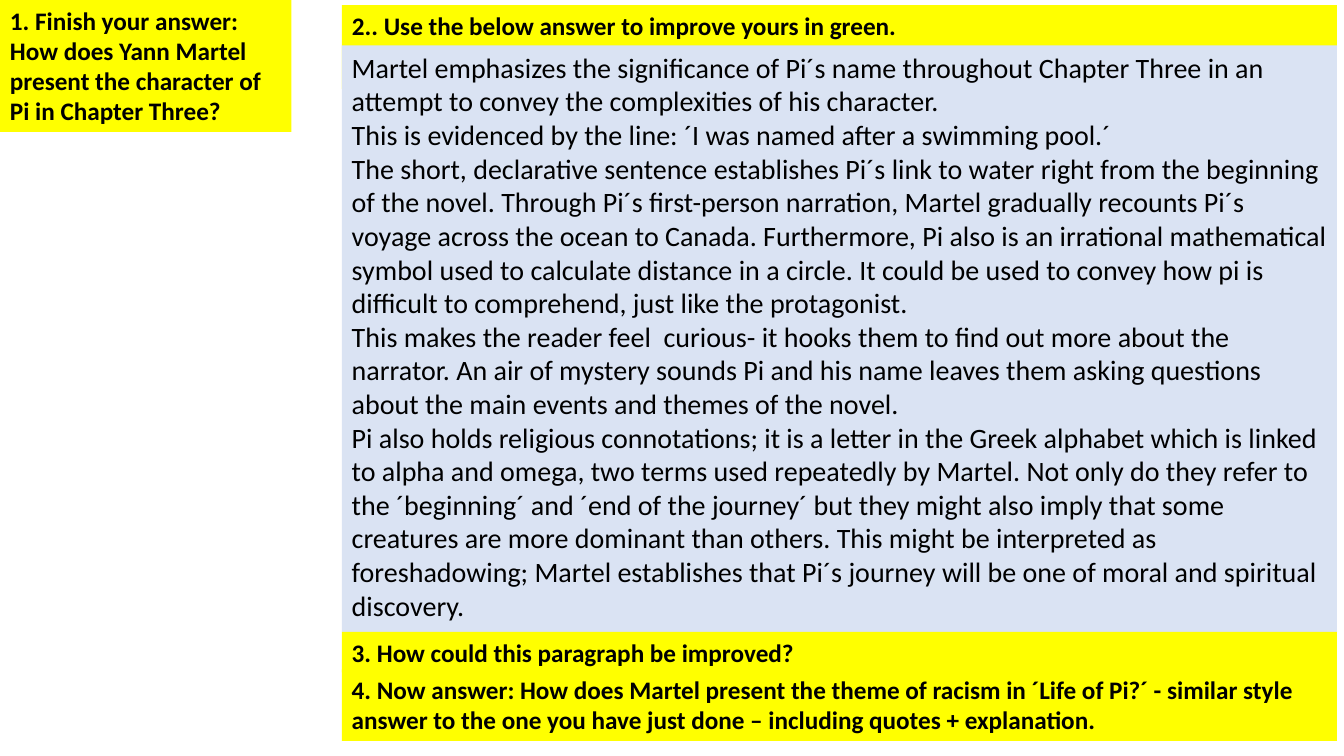
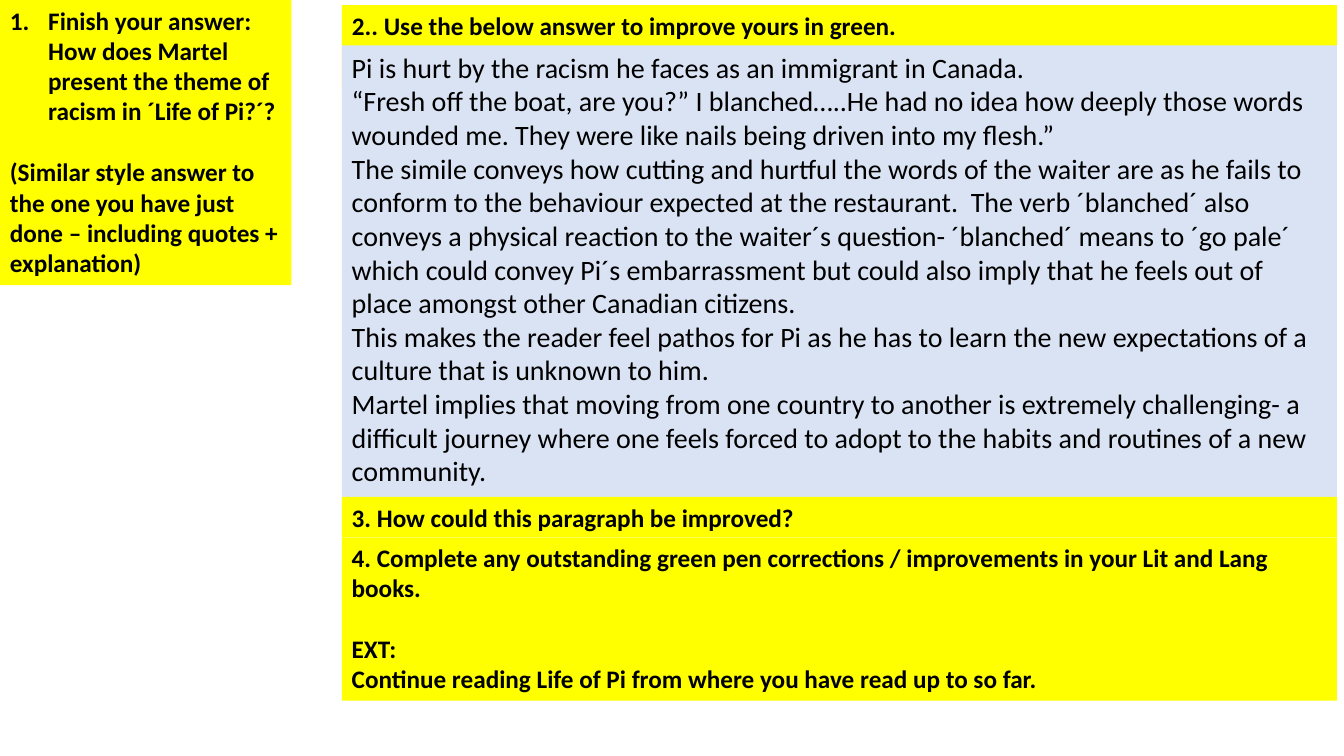
from dataclasses import dataclass

from lxml.etree import SubElement
from pptx import Presentation
from pptx.dml.color import RGBColor
from pptx.enum.text import MSO_ANCHOR, MSO_AUTO_SIZE, PP_ALIGN
from pptx.oxml.ns import qn
from pptx.util import Pt

PX = 9144  # 100 px to the inch
SLIDE_WIDTH, SLIDE_HEIGHT = 1333, 750
COLUMN_LEFT, COLUMN_TOP, COLUMN_WIDTH = 339, 5, 987
BAND_HEIGHT = 40
QUESTION_WIDTH = 289
NUMBER_INDENT = 38

YELLOW = RGBColor(0xFF, 0xFF, 0x00)
PALE_BLUE = RGBColor(0xDA, 0xE3, 0xF3)
BLACK = RGBColor(0x00, 0x00, 0x00)
FONT = "Calibri"
TASK_SIZE, ANSWER_SIZE = 18, 20
LINE_GAP = 22  # points, one line of task text

IMPROVE_TASK = "2.. Use the below answer to improve yours in green."
REVIEW_TASK = "3. How could this paragraph be improved?"


@dataclass
class Line:
    text: str
    gap_before: int = 0
    numbered: bool = False


def number_paragraph(para):
    properties = para._p.get_or_add_pPr()
    properties.set("marL", str(NUMBER_INDENT * PX))
    properties.set("indent", str(-NUMBER_INDENT * PX))
    SubElement(properties, qn("a:buFont"), typeface="+mj-lt")
    SubElement(properties, qn("a:buAutoNum"), type="arabicPeriod")


def fill_panel(panel, box, lines, color, size, bold):
    """Place a text shape in box (left, top, width, height) and write its lines."""
    panel.left, panel.top, panel.width, panel.height = (side * PX for side in box)
    panel.fill.solid()
    panel.fill.fore_color.rgb = color
    frame = panel.text_frame
    frame.word_wrap = True
    frame.auto_size = MSO_AUTO_SIZE.SHAPE_TO_FIT_TEXT
    frame.vertical_anchor = MSO_ANCHOR.TOP
    for index, line in enumerate(lines):
        para = frame.add_paragraph() if index else frame.paragraphs[0]
        if line.numbered:
            number_paragraph(para)
        para.alignment = PP_ALIGN.LEFT
        para.space_before = Pt(line.gap_before)
        span = para.add_run()
        span.text = line.text
        span.font.name = FONT
        span.font.size = Pt(size)
        span.font.bold = bold
        span.font.color.rgb = BLACK


def add_task(page, box, lines):
    panel = page.shapes.add_textbox(0, 0, 0, 0)
    fill_panel(panel, box, lines, YELLOW, TASK_SIZE, True)


def add_answer(page, box, lines):
    panel = page.shapes.add_textbox(0, 0, 0, 0)
    fill_panel(panel, box, lines, PALE_BLUE, ANSWER_SIZE, False)


def add_column(page, left, top, width, answer, answer_height,
               final_task, final_height, overlap=0):
    """Stack the title band, model answer and two closing tasks."""
    fill_panel(page.shapes.title, (left, top, width, BAND_HEIGHT),
               [Line(IMPROVE_TASK)], YELLOW, TASK_SIZE, True)
    top += BAND_HEIGHT
    add_answer(page, (left, top, width, answer_height), answer)
    top += answer_height
    add_task(page, (left, top, width, BAND_HEIGHT), [Line(REVIEW_TASK)])
    top += BAND_HEIGHT - overlap
    add_task(page, (left, top, width, final_height), final_task)


def add_lesson(deck, question, question_height, **column):
    page = deck.slides.add_slide(deck.slide_layouts[5])
    add_column(page, COLUMN_LEFT, COLUMN_TOP, COLUMN_WIDTH, **column)
    add_task(page, (0, 0, QUESTION_WIDTH, question_height), question)


def add_character_lesson(deck):
    add_lesson(
        deck,
        question=[Line("1. Finish your answer: How does Yann Martel present the "
                       "character of Pi in Chapter Three?")],
        question_height=131,
        answer=[
            Line("Martel emphasizes the significance of Pi´s name throughout Chapter "
                 "Three in an attempt to convey the complexities of his character."),
            Line("This is evidenced by the line: ´I was named after a swimming pool.´"),
            Line("The short, declarative sentence establishes Pi´s link to water right "
                 "from the beginning of the novel. Through Pi´s first-person narration, "
                 "Martel gradually recounts Pi´s voyage across the ocean to Canada. "
                 "Furthermore, Pi also is an irrational mathematical symbol used to "
                 "calculate distance in a circle. It could be used to convey how pi is "
                 "difficult to comprehend, just like the protagonist."),
            Line("This makes the reader feel  curious- it hooks them to find out more "
                 "about the narrator. An air of mystery sounds Pi and his name leaves "
                 "them asking questions about the main events and themes of the novel."),
            Line("Pi also holds religious connotations; it is a letter in the Greek "
                 "alphabet which is linked to alpha and omega, two terms used repeatedly "
                 "by Martel. Not only do they refer to the ´beginning´ and ´end of the "
                 "journey´ but they might also imply that some creatures are more "
                 "dominant than others. This might be interpreted as foreshadowing; "
                 "Martel establishes that Pi´s journey will be one of moral and "
                 "spiritual discovery."),
        ],
        answer_height=582,
        final_task=[Line("4. Now answer: How does Martel present the theme of racism in "
                         "´Life of Pi?´ - similar style answer to the one you have just "
                         "done – including quotes + explanation.")],
        final_height=71,
        overlap=3,
    )


def add_racism_lesson(deck):
    add_lesson(
        deck,
        question=[
            Line("Finish your answer: How does Martel present the theme of racism in "
                 "´Life of Pi?´?", numbered=True),
            Line("(Similar style answer to the one you have just done – including "
                 "quotes + explanation)", gap_before=LINE_GAP),
        ],
        question_height=283,
        answer=[
            Line("Pi is hurt by the racism he faces as an immigrant in Canada."),
            Line("“Fresh off the boat, are you?” I blanched…..He had no idea how deeply "
                 "those words wounded me. They were like nails being driven into my "
                 "flesh.”"),
            Line("The simile conveys how cutting and hurtful the words of the waiter are "
                 "as he fails to conform to the behaviour expected at the restaurant.  "
                 "The verb ´blanched´ also conveys a physical reaction to the waiter´s "
                 "question- ´blanched´ means to ´go pale´ which could convey Pi´s "
                 "embarrassment but could also imply that he feels out of place amongst "
                 "other Canadian citizens."),
            Line("This makes the reader feel pathos for Pi as he has to learn the new "
                 "expectations of a culture that is unknown to him."),
            Line("Martel implies that moving from one country to another is extremely "
                 "challenging- a difficult journey where one feels forced to adopt to "
                 "the habits and routines of a new community."),
        ],
        answer_height=448,
        final_task=[
            Line("4. Complete any outstanding green pen corrections / improvements in "
                 "your Lit and Lang books."),
            Line("EXT:", gap_before=LINE_GAP),
            Line("Continue reading Life of Pi from where you have read up to so far."),
        ],
        final_height=162,
    )


def main():
    deck = Presentation()
    deck.slide_width = SLIDE_WIDTH * PX
    deck.slide_height = SLIDE_HEIGHT * PX
    add_character_lesson(deck)
    add_racism_lesson(deck)
    deck.save("out.pptx")


if __name__ == "__main__":
    main()
